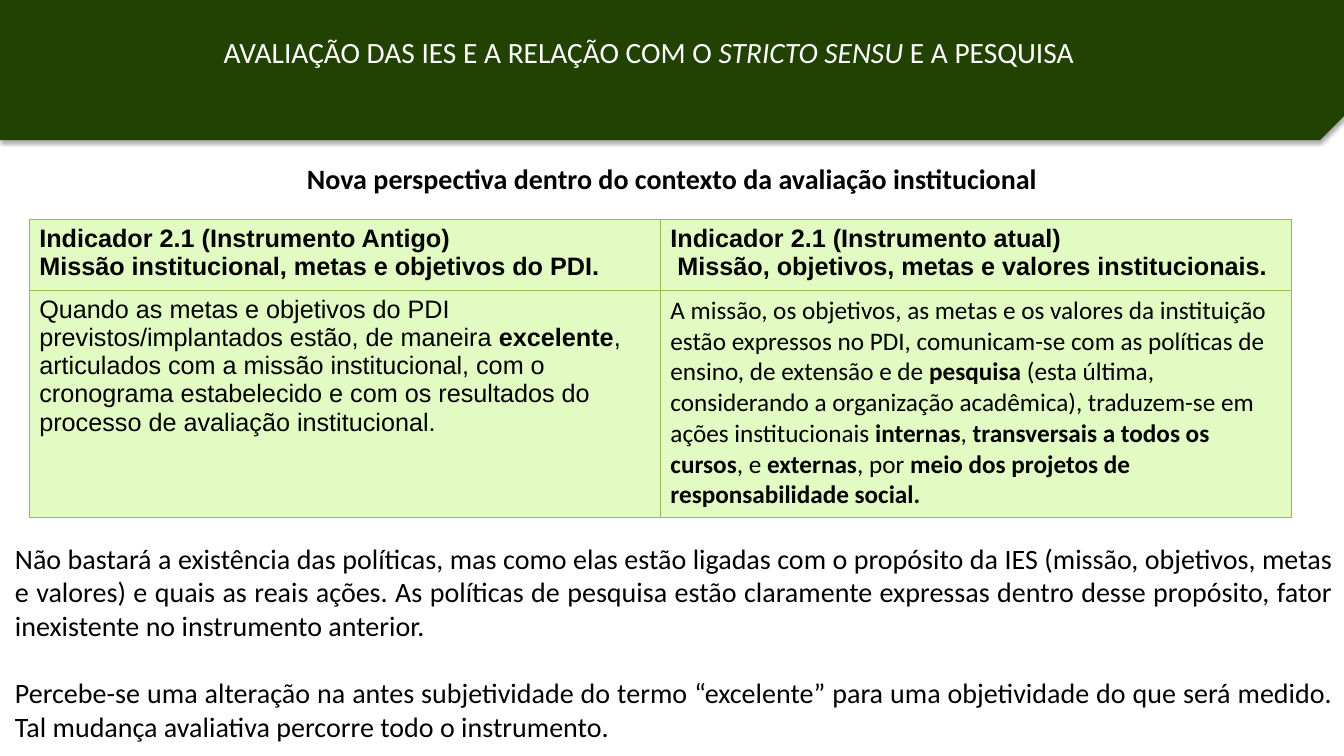
from lxml import etree
from pptx import Presentation
from pptx.dml.color import RGBColor
from pptx.enum.shapes import MSO_SHAPE
from pptx.enum.text import PP_ALIGN
from pptx.oxml.ns import qn
from pptx.util import Inches, Pt

SNIPPED = MSO_SHAPE.SNIP_1_RECTANGLE
LEFT, CENTER, JUSTIFY = PP_ALIGN.LEFT, PP_ALIGN.CENTER, PP_ALIGN.JUSTIFY
BLACK = RGBColor(0x00, 0x00, 0x00)
WHITE = RGBColor(0xFF, 0xFF, 0xFF)
DARK_GREEN = RGBColor(0x21, 0x42, 0x00)
PALE_GREEN = RGBColor(0xE2, 0xFB, 0xC2)
BORDER_GREEN = RGBColor(0x98, 0xB9, 0x55)
BORDER_SIDES = ("a:lnL", "a:lnR", "a:lnT", "a:lnB")

TITLE = [[("AVALIAÇÃO DAS IES E A RELAÇÃO COM O ", ""), ("STRICTO SENSU ", "i"), ("E A PESQUISA", "")]]
SUBTITLE = [[("Nova perspectiva dentro do contexto da avaliação institucional", "b")]]
OLD_HEADER = [
    [("Indicador 2.1 (Instrumento Antigo)", "b")],
    [("Missão institucional, metas e objetivos do PDI.", "b")],
]
NEW_HEADER = [
    [("Indicador 2.1 (Instrumento atual)", "b")],
    [(" Missão, objetivos, metas e valores institucionais.", "b")],
]
OLD_TEXT = [[
    ("Quando as metas e objetivos do PDI previstos/implantados estão, de maneira ", ""),
    ("excelente", "b"),
    (", articulados com a missão institucional, com o cronograma estabelecido e com os "
     "resultados do processo de avaliação institucional.", ""),
]]
NEW_TEXT = [[
    ("A missão, os objetivos, as metas e os valores da instituição estão expressos no PDI, "
     "comunicam-se com as políticas de ensino, de extensão e de ", ""),
    ("pesquisa", "b"),
    (" (esta última, considerando a organização acadêmica), traduzem-se em ações institucionais ", ""),
    ("internas", "b"),
    (", ", ""),
    ("transversais a todos os cursos", "b"),
    (", e ", ""),
    ("externas", "b"),
    (", por ", ""),
    ("meio dos projetos de responsabilidade social.", "b"),
]]
INDICATORS = [
    [(OLD_HEADER, "Arial"), (NEW_HEADER, "Arial")],
    [(OLD_TEXT, "Arial"), (NEW_TEXT, "Calibri")],
]
CONCLUSIONS = [
    [("Não bastará a existência das políticas, mas como elas estão ligadas com o propósito da IES "
      "(missão, objetivos, metas e valores) e quais as reais ações. As políticas de pesquisa estão "
      "claramente expressas dentro desse propósito, fator inexistente no instrumento anterior.", "")],
    [("Percebe-se uma alteração na antes subjetividade do termo “excelente” para uma objetividade "
      "do que será medido. Tal mudança avaliativa percorre todo o instrumento.", "")],
]


def write_text(frame, paragraphs, size, font="Calibri", color=BLACK, align=LEFT, gap=0):
    frame.word_wrap = True
    for index, runs in enumerate(paragraphs):
        paragraph = frame.add_paragraph() if index else frame.paragraphs[0]
        paragraph.alignment = align
        paragraph.space_before = Pt(gap if index else 0)
        paragraph.font.name = font
        paragraph.font.size = Pt(size)
        paragraph.font.color.rgb = color
        emphases = {emphasis for _, emphasis in runs}
        if emphases == {"b"}:
            paragraph.font.bold = True
        for text, emphasis in runs:
            run = paragraph.add_run()
            run.text = text
            if len(emphases) > 1:
                run.font.bold = emphasis == "b"
                run.font.italic = emphasis == "i"


def add_text(slide, box, paragraphs, size, **style):
    text_box = slide.shapes.add_textbox(*map(Inches, box))
    write_text(text_box.text_frame, paragraphs, size, **style)


def add_shadow(shape):
    effects = etree.SubElement(shape._element.spPr, qn("a:effectLst"))
    shadow = etree.SubElement(effects, qn("a:outerShdw"), blurRad=str(Pt(3.1)),
                              dist=str(Pt(1.8)), dir="5400000", rotWithShape="0")
    color = etree.SubElement(shadow, qn("a:srgbClr"), val=str(BLACK))
    etree.SubElement(color, qn("a:alpha"), val="35000")


def add_banner(slide, box):
    left, top, width, height = box
    banner = slide.shapes.add_shape(SNIPPED, *map(Inches, box))
    banner._element.spPr.xfrm.set("flipV", "1")
    banner.fill.solid()
    banner.fill.fore_color.rgb = DARK_GREEN
    banner.line.fill.background()
    add_shadow(banner)
    title_box = (left + 2.12, top + 0.32, width * 0.66, 0.45)
    add_text(slide, title_box, TITLE, 21, color=WHITE)


def style_cell(cell):
    properties = cell._tc.get_or_add_tcPr()
    for side in BORDER_SIDES:
        line = etree.SubElement(properties, qn(side), w=str(Pt(0.75)))
        fill = etree.SubElement(line, qn("a:solidFill"))
        etree.SubElement(fill, qn("a:srgbClr"), val=str(BORDER_GREEN))
    cell.fill.solid()
    cell.fill.fore_color.rgb = PALE_GREEN


def add_indicators(slide, box, header_height):
    height = box[3]
    table = slide.shapes.add_table(2, 2, *map(Inches, box)).table
    table.first_row = table.horz_banding = False
    table.rows[0].height = Inches(header_height)
    table.rows[1].height = Inches(height - header_height)
    for row, contents in enumerate(INDICATORS):
        for column, (paragraphs, font) in enumerate(contents):
            cell = table.cell(row, column)
            style_cell(cell)
            write_text(cell.text_frame, paragraphs, 18, font=font)


def add_conclusions(slide, box):
    add_text(slide, box, CONCLUSIONS, 20, align=JUSTIFY, gap=24)


def main():
    presentation = Presentation()
    presentation.slide_width = Inches(13.33)
    presentation.slide_height = Inches(7.5)
    slide = presentation.slides.add_slide(presentation.slide_layouts[6])
    add_banner(slide, (0, -0.03, 13.33, 1.42))
    add_indicators(slide, (0.29, 2.18, 12.52, 2.9), 0.65)
    add_text(slide, (2.65, 1.55, 8.03, 0.44), SUBTITLE, 20, align=CENTER)
    add_conclusions(slide, (0.05, 5.32, 13.27, 2.46))
    presentation.save("out.pptx")


if __name__ == "__main__":
    main()
